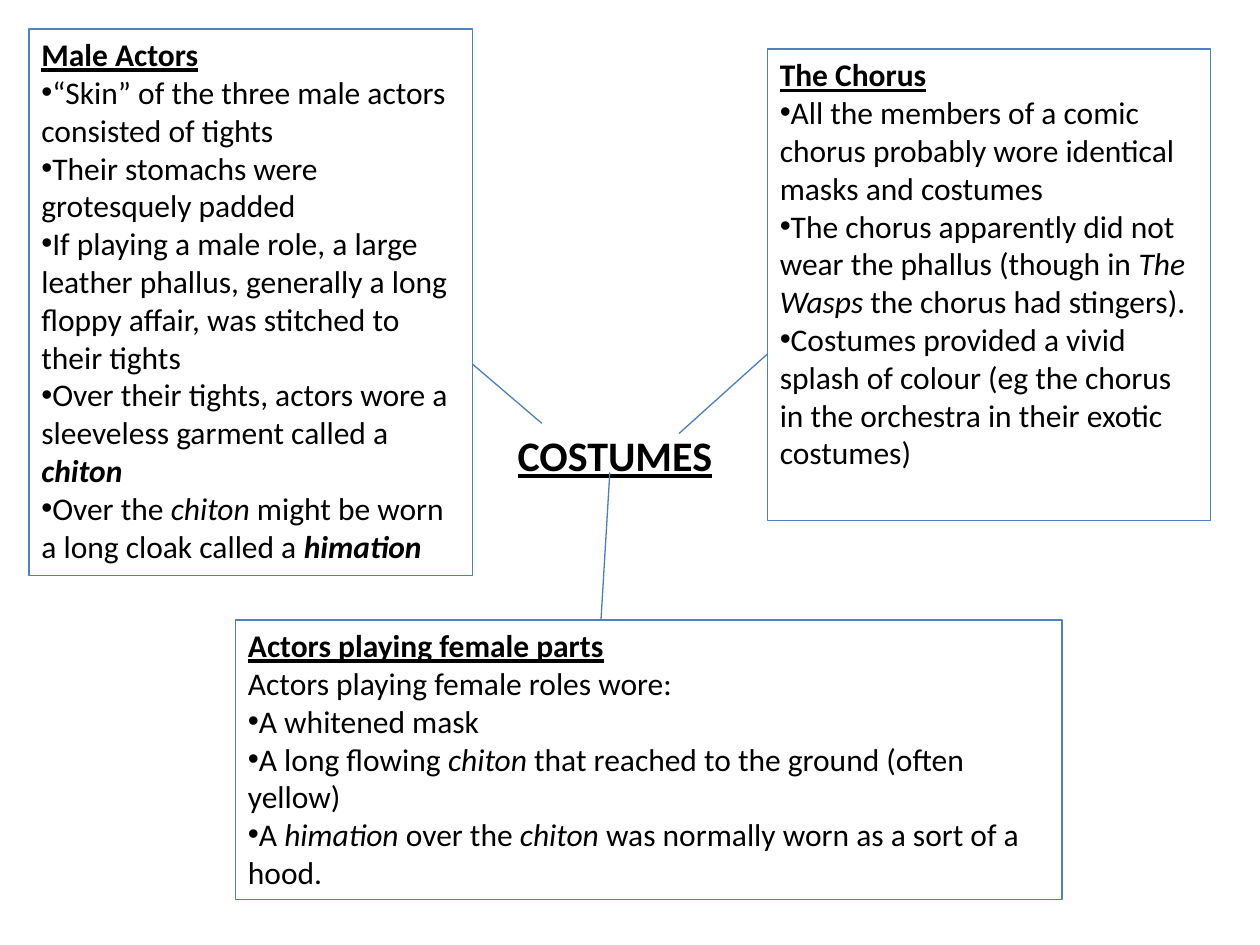
from lxml import etree
from pptx import Presentation
from pptx.dml.color import RGBColor
from pptx.enum.shapes import MSO_CONNECTOR
from pptx.enum.text import MSO_ANCHOR, MSO_AUTO_SIZE, PP_ALIGN
from pptx.oxml.ns import qn
from pptx.util import Inches, Pt

STRAIGHT = MSO_CONNECTOR.STRAIGHT
TOP = MSO_ANCHOR.TOP
FIXED_SIZE = MSO_AUTO_SIZE.NONE
LEFT, CENTER = PP_ALIGN.LEFT, PP_ALIGN.CENTER

COLUMNS, ROWS = 100, 75
CELL = Inches(0.1)
FONT = "Calibri"
LINE_WIDTH = Pt(0.75)
COLORS = {"text": "000000", "border": "4F81BD", "spoke": "4B7EBC"}

# Run styles
PLAIN = {}
ITALIC = {"italic": True}
TERM = {"bold": True, "italic": True}
HEADING = {"bold": True, "underline": True}

# Each note: area in grid cells, heading, optional lead-in, bullets made of runs
NOTES = [
    ((2.3, 2.3, 35.2, 43.4), "Male Actors", None, [
        [("“Skin” of the three male actors consisted of tights", PLAIN)],
        [("Their stomachs were grotesquely padded", PLAIN)],
        [("If playing a male role, a large leather phallus, generally a long "
          "floppy affair, was stitched to their tights", PLAIN)],
        [("Over their tights, actors wore a sleeveless garment called a ", PLAIN),
         ("chiton", TERM)],
        [("Over the ", PLAIN), ("chiton", ITALIC),
         (" might be worn a long cloak called a ", PLAIN), ("himation", TERM)],
    ]),
    ((60.9, 3.9, 35.2, 37.4), "The Chorus", None, [
        [("All the members of a comic chorus probably wore identical masks "
          "and costumes", PLAIN)],
        [("The chorus apparently did not wear the phallus (though in ", PLAIN),
         ("The Wasps", ITALIC), (" the chorus had stingers).", PLAIN)],
        [("Costumes provided a vivid splash of colour (eg the chorus in the "
          "orchestra in their exotic costumes)", PLAIN)],
    ]),
    ((18.7, 49.2, 65.6, 22.2), "Actors playing female parts",
     "Actors playing female roles wore:", [
        [("A whitened mask", PLAIN)],
        [("A long flowing ", PLAIN), ("chiton", ITALIC),
         (" that reached to the ground (often yellow)", PLAIN)],
        [("A ", PLAIN), ("himation", ITALIC), (" over the ", PLAIN),
         ("chiton ", ITALIC),
         ("was normally worn as a sort of a hood.", PLAIN)],
    ]),
]

# Start and end of each line, in grid cells
SPOKES = [
    ((43, 33.6), (37.5, 28.9)),
    ((48.4, 37.5), (47.7, 49.2)),
    ((53.9, 34.4), (60.9, 28.1)),
]


def cells(values):
    return [round(value * CELL) for value in values]


def color(name):
    return RGBColor.from_string(COLORS[name])


def add_text(paragraph, text, size=18, bold=False, italic=False, underline=False):
    run = paragraph.add_run()
    run.text = text
    font = run.font
    font.name, font.size = FONT, Pt(size)
    font.bold, font.italic, font.underline = bold, italic, underline
    font.color.rgb = color("text")


def add_bullet(paragraph):
    properties = paragraph._p.get_or_add_pPr()
    etree.SubElement(properties, qn("a:buFont")).set("typeface", "Arial")
    etree.SubElement(properties, qn("a:buChar")).set("char", "•")


def add_box(slide, area, paragraphs, alignment=LEFT, size=18):
    """Add a text box; paragraphs holds pairs of (runs, has_bullet)."""
    box = slide.shapes.add_textbox(*cells(area))
    frame = box.text_frame
    frame.word_wrap = True
    frame.auto_size = FIXED_SIZE
    frame.vertical_anchor = TOP
    for index, (runs, has_bullet) in enumerate(paragraphs):
        paragraph = frame.add_paragraph() if index else frame.paragraphs[0]
        paragraph.alignment = alignment
        if has_bullet:
            add_bullet(paragraph)
        for text, style in runs:
            add_text(paragraph, text, size=size, **style)
    return box


def add_note(slide, area, heading, lead_in, bullets):
    paragraphs = [([(heading, HEADING)], False)]
    if lead_in:
        paragraphs.append(([(lead_in, PLAIN)], False))
    paragraphs += [(runs, True) for runs in bullets]
    box = add_box(slide, area, paragraphs)
    box.line.color.rgb = color("border")
    box.line.width = LINE_WIDTH


def add_spoke(slide, start, end):
    spoke = slide.shapes.add_connector(STRAIGHT, *cells(start + end))
    spoke.line.color.rgb = color("spoke")
    spoke.line.width = LINE_WIDTH
    etree.SubElement(spoke._element.spPr, qn("a:effectLst"))


def main():
    presentation = Presentation()
    presentation.slide_width = COLUMNS * CELL
    presentation.slide_height = ROWS * CELL
    slide = presentation.slides.add_slide(presentation.slide_layouts[6])
    for note in NOTES:
        add_note(slide, *note)
    add_box(slide, (39.8, 33.6, 18, 5), [([("COSTUMES", HEADING)], False)],
            alignment=CENTER, size=24)
    for start, end in SPOKES:
        add_spoke(slide, start, end)
    presentation.save("out.pptx")


if __name__ == "__main__":
    main()
